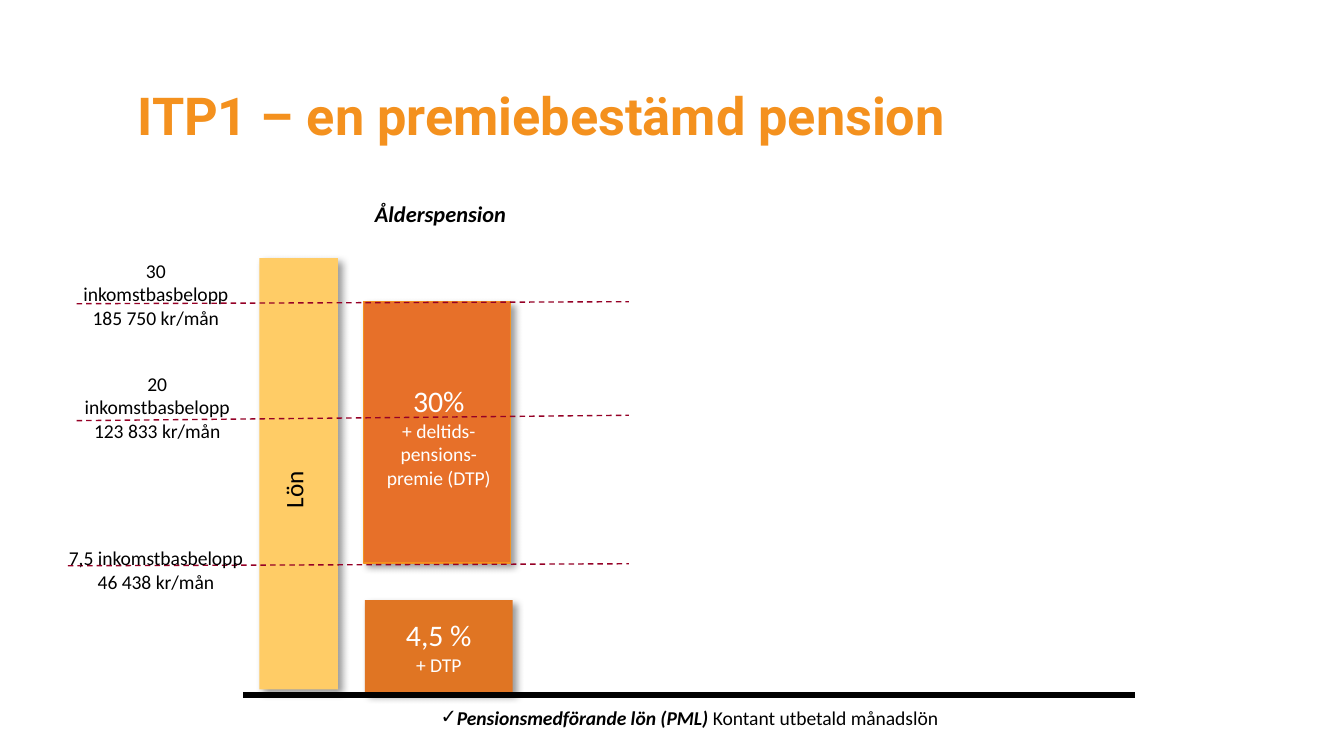
"""Build the slide on ITP1, a defined-contribution pension."""
from dataclasses import dataclass

from lxml.etree import SubElement
from pptx import Presentation
from pptx.dml.color import RGBColor
from pptx.enum.dml import MSO_LINE
from pptx.enum.shapes import MSO_CONNECTOR, MSO_SHAPE
from pptx.enum.text import MSO_ANCHOR, PP_ALIGN
from pptx.oxml.ns import qn
from pptx.shapes.autoshape import Shape
from pptx.slide import Slide
from pptx.util import Emu, Pt

PX = 4572
BLACK = RGBColor(0x00, 0x00, 0x00)
WHITE = RGBColor(0xFF, 0xFF, 0xFF)
TITLE_ORANGE = RGBColor(0xF4, 0x91, 0x1E)
HIGH_ORANGE = RGBColor(0xE7, 0x70, 0x29)
LOW_ORANGE = RGBColor(0xE0, 0x75, 0x23)
SALARY_YELLOW = RGBColor(0xFF, 0xCC, 0x66)
LIMIT_RED = RGBColor(0x95, 0x00, 0x26)


@dataclass(frozen=True)
class Area:
    left: int
    top: int
    width: int
    height: int

    def emu(self) -> tuple[Emu, ...]:
        return tuple(Emu(value * PX) for value in (self.left, self.top, self.width, self.height))


@dataclass(frozen=True)
class Span:
    text: str
    size: float = 10.5
    color: RGBColor = BLACK
    bold: bool = False
    italic: bool = False
    font: str = "Calibri"


@dataclass(frozen=True)
class Para:
    spans: tuple[Span, ...]
    align: PP_ALIGN = PP_ALIGN.CENTER
    bullet: str = ""


@dataclass(frozen=True)
class TextBox:
    area: Area
    paras: tuple[Para, ...]
    inset: bool = True
    rotation: int = 0


@dataclass(frozen=True)
class Bar:
    area: Area
    fill: RGBColor
    outline: RGBColor | None = None
    paras: tuple[Para, ...] = ()


@dataclass(frozen=True)
class Rule:
    start: tuple[int, int]
    end: tuple[int, int]
    color: RGBColor = LIMIT_RED
    width: float = 0.75
    dashed: bool = True


def left(*spans: Span) -> Para:
    return Para(spans, PP_ALIGN.LEFT)


def limit_label(area: Area, text: str) -> TextBox:
    return TextBox(area, (Para((Span(text),)),), inset=False)


def rate(headline: str, detail: str) -> tuple[Para, ...]:
    return Para((Span(headline, 16, WHITE),)), Para((Span(detail, color=WHITE),))


BARS = (
    Bar(Area(541, 449, 219, 389), HIGH_ORANGE, TITLE_ORANGE),
    Bar(Area(386, 384, 117, 642), SALARY_YELLOW),
    Bar(Area(543, 893, 220, 138), LOW_ORANGE, paras=rate("4,5 %", "+ DTP")),
)
RULES = (
    Rule((362, 1034), (1689, 1034), BLACK, 3, dashed=False),
    Rule((114, 626), (936, 618)),
    Rule((101, 842), (936, 839)),
    Rule((114, 452), (936, 449)),
)
TEXTS = (
    TextBox(Area(185, 114, 1588, 114), (
        left(Span("ITP1 – en premiebestämd pension", 28, TITLE_ORANGE, bold=True, font="Roboto")),)),
    TextBox(Area(558, 298, 1180, 40), (
        left(Span("Ålderspension", 12, bold=True, italic=True)),), inset=False),
    limit_label(Area(109, 385, 246, 106), "30 inkomstbasbelopp\n185 750 kr/mån"),
    limit_label(Area(111, 553, 246, 106), "20 inkomstbasbelopp\n123 833 kr/mån"),
    limit_label(Area(101, 813, 262, 70), "7,5 inkomstbasbelopp\n46 438 kr/mån"),
    TextBox(Area(376, 682, 122, 66), (left(Span("Lön", 13.5)),), rotation=270),
    TextBox(Area(543, 560, 220, 180), rate("30%", "+ deltids-pensions-premie (DTP)")),
    TextBox(Area(362, 1040, 1328, 56), (
        Para((Span("Pensionsmedförande lön (PML) ", bold=True, italic=True),
              Span("Kontant utbetald månadslön")), bullet="✓"),)),
)


def write_text(shape: Shape, paras: tuple[Para, ...], inset: bool, wrap: bool) -> None:
    frame = shape.text_frame
    frame.word_wrap = wrap
    if not inset:
        frame.margin_left = frame.margin_top = frame.margin_right = frame.margin_bottom = 0
    for index, para in enumerate(paras):
        paragraph = frame.paragraphs[0] if index == 0 else frame.add_paragraph()
        paragraph.alignment = para.align
        if para.bullet:
            properties = paragraph._p.get_or_add_pPr()
            properties.set("marL", "0")
            properties.set("indent", "0")
            SubElement(properties, qn("a:buFont"), typeface="Calibri")
            SubElement(properties, qn("a:buChar"), char=para.bullet)
        for span in para.spans:
            for number, text in enumerate(span.text.split("\n")):
                if number:
                    paragraph.add_line_break()
                run = paragraph.add_run()
                run.text = text
                run.font.name = span.font
                run.font.size = Pt(span.size)
                run.font.bold = span.bold
                run.font.italic = span.italic
                run.font.color.rgb = span.color


def add_shadow(shape: Shape) -> None:
    shape.shadow.inherit = False
    effects = shape._element.spPr.find(qn("a:effectLst"))
    shadow = SubElement(effects, qn("a:outerShdw"), blurRad=str(Pt(4)), dist=str(Pt(3)),
                        dir=str(45 * 60000), algn="tl", rotWithShape="0")
    color = SubElement(shadow, qn("a:srgbClr"), val=str(BLACK))
    SubElement(color, qn("a:alpha"), val="40000")


def draw_bar(page: Slide, bar: Bar) -> None:
    shape = page.shapes.add_shape(MSO_SHAPE.RECTANGLE, *bar.area.emu())
    shape.fill.solid()
    shape.fill.fore_color.rgb = bar.fill
    if bar.outline is None:
        shape.line.fill.background()
    else:
        shape.line.color.rgb = bar.outline
        shape.line.width = Pt(0.75)
    add_shadow(shape)
    if bar.paras:
        shape.text_frame.vertical_anchor = MSO_ANCHOR.MIDDLE
        write_text(shape, bar.paras, inset=False, wrap=False)


def draw_rule(page: Slide, rule: Rule) -> None:
    ends = (Emu(value * PX) for value in rule.start + rule.end)
    line = page.shapes.add_connector(MSO_CONNECTOR.STRAIGHT, *ends)
    line.line.color.rgb = rule.color
    line.line.width = Pt(rule.width)
    if rule.dashed:
        line.line.dash_style = MSO_LINE.DASH
    SubElement(line._element.spPr, qn("a:effectLst"))


def draw_text(page: Slide, text: TextBox) -> None:
    box = page.shapes.add_textbox(*text.area.emu())
    box.rotation = text.rotation
    write_text(box, text.paras, text.inset, wrap=True)


def main() -> None:
    deck = Presentation()
    deck.slide_width, deck.slide_height = Emu(2000 * PX), Emu(1125 * PX)
    page = deck.slides.add_slide(deck.slide_layouts[6])
    for bar in BARS:
        draw_bar(page, bar)
    for rule in RULES:
        draw_rule(page, rule)
    for text in TEXTS:
        draw_text(page, text)
    deck.save("out.pptx")


if __name__ == "__main__":
    main()
